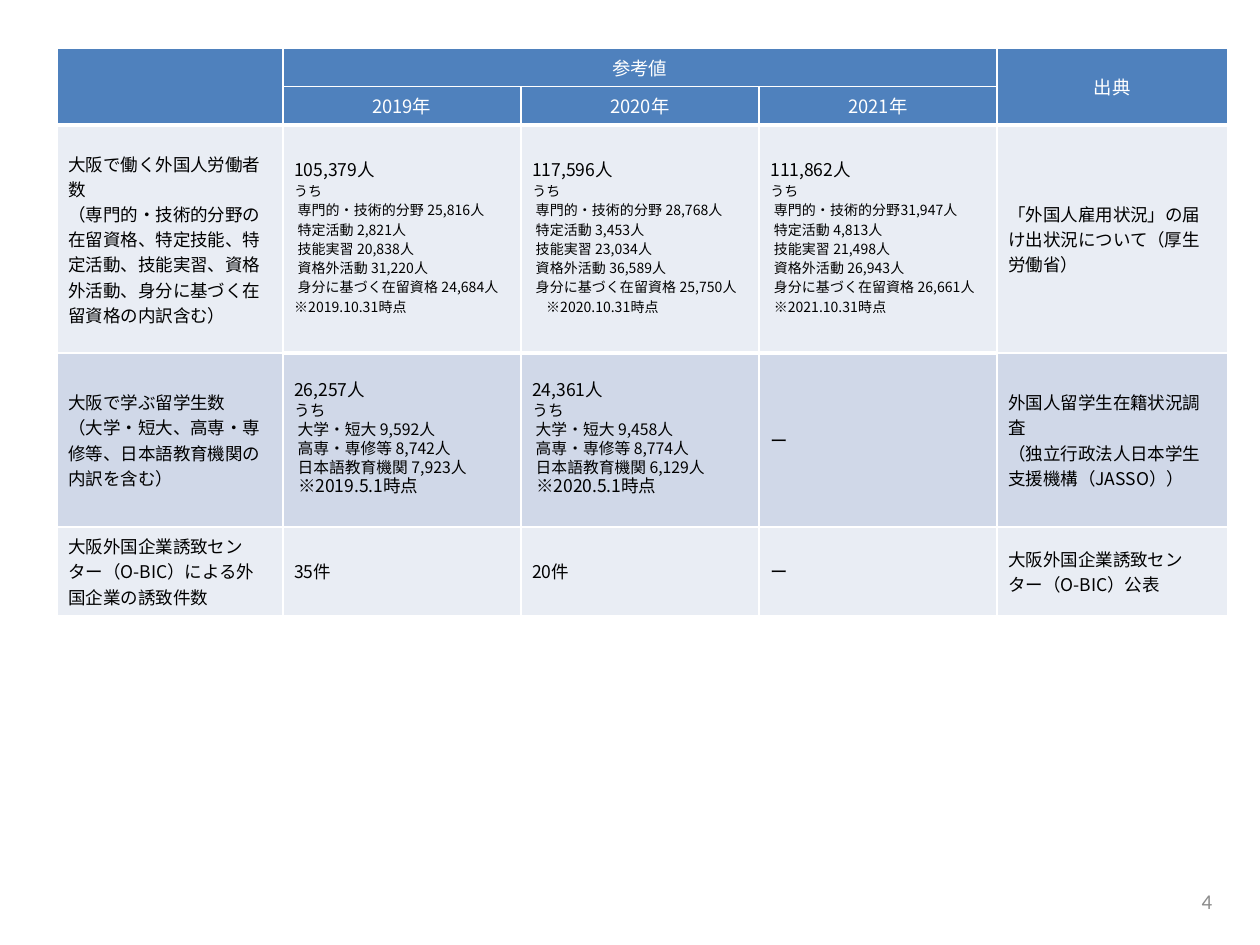
from itertools import product
from lxml.etree import SubElement as Sub
from pptx import Presentation as Deck
from pptx.dml.color import RGBColor as Rgb
from pptx.enum.text import MSO_ANCHOR as Anchor, PP_ALIGN as Align
from pptx.oxml.ns import qn
from pptx.util import Cm, Pt

# Content: a line is (text, size, indent); rows are parted by kind
years = ["2019年", "2020年", "2021年"]
heads = {(0, 1): "参考値", (0, 4): "出典",
         **{(1, 1 + i): year for i, year in enumerate(years)}}
spans = [((0, 0), (1, 0)), ((0, 1), (0, 3)), ((0, 4), (1, 4))]

sides = {
    (2, 0): ["大阪で働く外国人労働者数",
             "（専門的・技術的分野の在留資格、特定技能、特定活動、技能実習、"
             "資格外活動、身分に基づく在留資格の内訳含む）"],
    (2, 4): ["「外国人雇用状況」の届け出状況について（厚生労働省）"],
    (3, 0): ["大阪で学ぶ留学生数",
             "（大学・短大、高専・専修等、日本語教育機関の内訳を含む）"],
    (3, 4): ["外国人留学生在籍状況調査",
             "（独立行政法人日本学生支援機構（JASSO））"],
    (4, 0): ["大阪外国企業誘致センター（O-BIC）による外国企業の誘致件数"],
    (4, 4): ["大阪外国企業誘致センター（O-BIC）公表"],
    (4, 1): ["35件"], (4, 2): ["20件"], (3, 3): ["ー"], (4, 3): ["ー"],
}

# Total, parts, closing note and the note's indent in cm
counts = {
    (2, 1): ("105,379人", ["専門的・技術的分野 25,816人", "特定活動 2,821人",
                          "技能実習 20,838人", "資格外活動 31,220人",
                          "身分に基づく在留資格 24,684人"],
             "※2019.10.31時点", 0),
    (2, 2): ("117,596人", ["専門的・技術的分野 28,768人", "特定活動 3,453人",
                          "技能実習 23,034人", "資格外活動 36,589人",
                          "身分に基づく在留資格 25,750人"],
             "※2020.10.31時点", 0.28),
    (2, 3): ("111,862人", ["専門的・技術的分野31,947人", "特定活動 4,813人",
                          "技能実習 21,498人", "資格外活動 26,943人",
                          "身分に基づく在留資格 26,661人"],
             "※2021.10.31時点", 0.07),
    (3, 1): ("26,257人", ["大学・短大 9,592人", "高専・専修等 8,742人",
                         "日本語教育機関 7,923人"],
             "※2019.5.1時点", 0.08),
    (3, 2): ("24,361人", ["大学・短大 9,458人", "高専・専修等 8,774人",
                         "日本語教育機関 6,129人"],
             "※2020.5.1時点", 0.08),
}
page = "4"

# Theme and sizes
theme = {"font": "Noto Sans CJK JP", "num": "Calibri",
         "head": "4F81BD", "light": "E9EDF4", "dark": "D0D8E8",
         "white": "FFFFFF", "black": "000000", "gray": "8C8C8C",
         "head_pt": 10.5, "body_pt": 10, "page_pt": 12,
         "part_pt": {2: 8, 3: 9}, "note_pt": {2: 8, 3: 10}}
fills = ["head", "head", "light", "dark", "light"]
wides = [4.55, 4.8, 4.8, 4.8, 4.64]
highs = [0.77, 0.77, 4.6, 3.5, 1.8]


def put(obj, **vals):
    for key, val in vals.items():
        setattr(obj, key, val)


def write(para, text, size, color, face):
    run = para.add_run()
    run.text = text
    put(run.font, name=face, size=Pt(size), bold=False)
    run.font.color.rgb = Rgb.from_string(theme[color])
    Sub(run.font._element, qn("a:ea"), typeface=face)


def fill_text(cell, lines, color, **form):
    frame = cell.text_frame
    for i, (text, size, dent) in enumerate(lines):
        para = frame.add_paragraph() if i else frame.paragraphs[0]
        put(para, **form)
        if dent:
            para._p.get_or_add_pPr().set("marL", str(Cm(dent)))
        write(para, text, size, color, theme["font"])


def edge(cell, **sides):
    props = cell._tc.get_or_add_tcPr()
    for i, (tag, wide) in enumerate(sides.items()):
        line = props.makeelement(qn("a:" + tag), {"w": str(Pt(wide))})
        fill = Sub(line, qn("a:solidFill"))
        Sub(fill, qn("a:srgbClr"), val=theme["white"])
        props.insert(i, line)


deck = Deck()
put(deck, slide_width=Cm(25.4), slide_height=Cm(19.05))
slide = deck.slides.add_slide(deck.slide_layouts[6])

# Table grid
table = slide.shapes.add_table(len(highs), len(wides), Cm(1.15), Cm(0.97),
                               Cm(sum(wides)), Cm(sum(highs))).table
put(table, first_row=False, horz_banding=False)
for col, wide in zip(table.columns, wides):
    col.width = Cm(wide)
for row, high in zip(table.rows, highs):
    row.height = Cm(high)
for start, end in spans:
    table.cell(*start).merge(table.cell(*end))

# Fills and borders; thick rules under the head and the first counts
for r, c in product(range(len(highs)), range(len(wides))):
    cell = table.cell(r, c)
    put(cell, vertical_anchor=Anchor.MIDDLE,
        margin_left=Cm(0.23), margin_right=Cm(0.23),
        margin_top=Cm(0.12), margin_bottom=Cm(0.12))
    cell.fill.solid()
    cell.fill.fore_color.rgb = Rgb.from_string(theme[fills[r]])
    mid = 1 <= c <= 3
    top = 3 if r == 2 or (r == 3 and mid) else 1
    low = 3 if r == 1 or (r == 2 and mid) or (r == 0 and not mid) else 1
    edge(cell, lnL=1, lnR=1, lnT=top, lnB=low)
    if (r, c) not in {**heads, **sides, **counts}:
        last = cell.text_frame.paragraphs[0]._p.get_or_add_endParaRPr()
        last.set("sz", str(int(theme["head_pt"] * 100)))

# Cell text
for spot, text in heads.items():
    fill_text(table.cell(*spot), [(text, theme["head_pt"], 0)], "white",
              alignment=Align.CENTER)
for spot, texts in sides.items():
    fill_text(table.cell(*spot), [(t, theme["body_pt"], 0) for t in texts],
              "black")
for spot, (total, parts, note, dent) in counts.items():
    small, end = theme["part_pt"][spot[0]], theme["note_pt"][spot[0]]
    lines = [(total, theme["body_pt"], 0), ("うち", small, 0),
             *((part, small, 0.07) for part in parts), (note, end, dent)]
    fill_text(table.cell(*spot), lines, "black", line_spacing=Pt(11))

# Page number
box = slide.shapes.add_textbox(Cm(18.77), Cm(17.65), Cm(5.92), Cm(1.02))
put(box.text_frame, word_wrap=True, vertical_anchor=Anchor.MIDDLE)
para = box.text_frame.paragraphs[0]
para.alignment = Align.RIGHT
write(para, page, theme["page_pt"], "gray", theme["num"])

deck.save("out.pptx")
